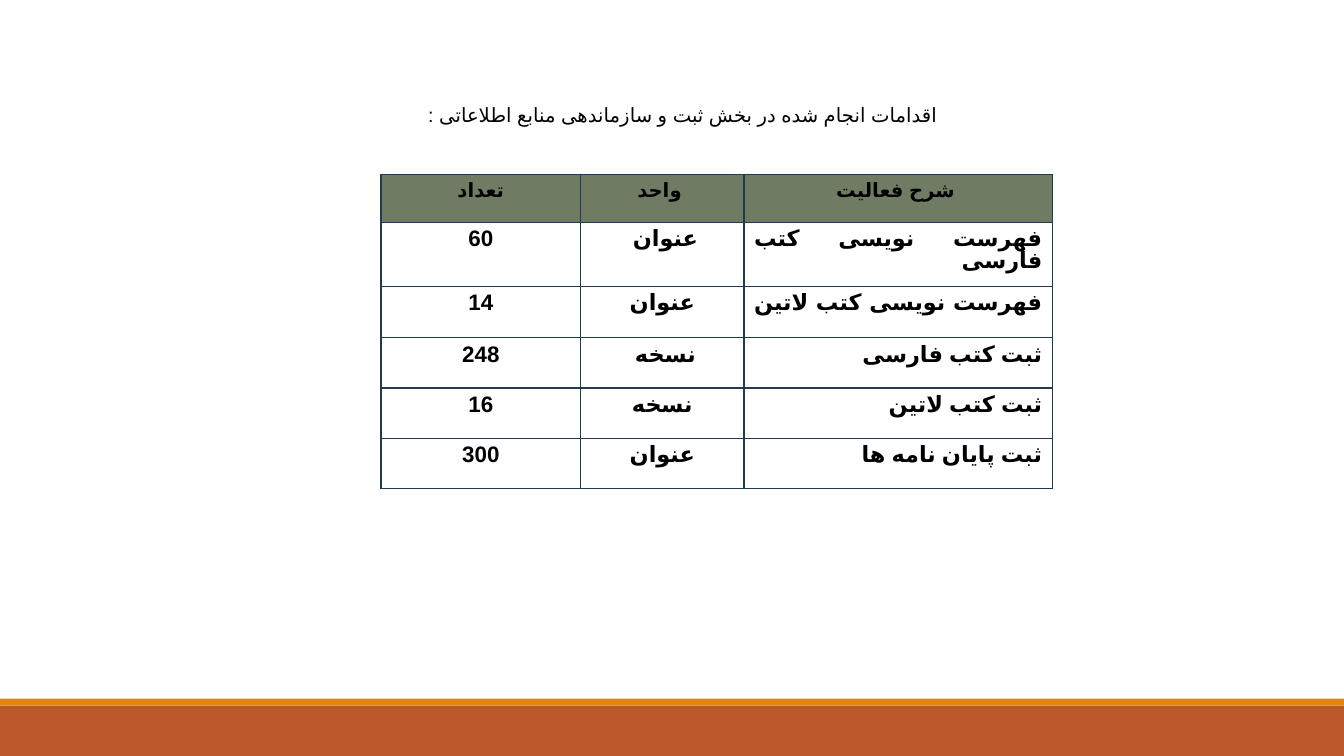
from pptx import Presentation
from pptx.dml.color import RGBColor
from pptx.enum.shapes import MSO_SHAPE as SHAPE
from pptx.enum.text import PP_ALIGN as AL
from pptx.oxml import parse_xml
from pptx.oxml.ns import nsdecls
from pptx.util import Pt

COLORS = {
    "text": "000000",
    "header": "6F7B63",
    "border": "203A4E",
    "band": "BD582C",
    "stripe": "E48312",
}
FONT = "Calibri"
ARABIC_FONT = "Arial"
TITLE = "اقدامات انجام شده در بخش ثبت و سازماندهی منابع اطلاعاتی :"
HEADER = ("تعداد", "واحد ", "شرح فعالیت ")
ACTIVITIES = [
    ("60", "عنوان ", "فهرست نویسی کتب فارسی "),
    ("14", "عنوان", "فهرست نویسی کتب لاتین "),
    ("248", "نسخه ", "ثبت کتب فارسی"),
    ("16", "نسخه", "ثبت کتب لاتین"),
    ("300", "عنوان", "ثبت پایان نامه ها "),
]
COL_WIDTHS = (142.5, 116.7, 220.3)
ROW_HEIGHTS = (34.5, 45.7, 36.5, 36, 36, 36)


def rgb(name):
    return RGBColor.from_string(COLORS[name])


def write(tf, text, size=16, bold=False, align=AL.CENTER, rtl=True,
          spacing=None, after=None):
    p = tf.paragraphs[0]
    p.alignment = align
    p.line_spacing = spacing
    if after is not None:
        p.space_after = Pt(after)
    if rtl:
        p._p.get_or_add_pPr().set("rtl", "1")
    r = p.add_run()
    r.text = text
    r.font.name = FONT
    r.font.size = Pt(size)
    r.font.bold = bold
    r.font.color.rgb = rgb("text")
    r_pr = r._r.get_or_add_rPr()
    r_pr.set("lang", "fa-IR")
    r_pr.append(parse_xml(f'<a:cs {nsdecls("a")} typeface="{ARABIC_FONT}"/>'))


def add_bar(s, color, x, y, w, h):
    sp = s.shapes.add_shape(SHAPE.RECTANGLE, Pt(x), Pt(y), Pt(w), Pt(h))
    sp.shadow.inherit = False
    sp.fill.solid()
    sp.fill.fore_color.rgb = rgb(color)
    sp.line.fill.background()


def add_footer(s, x, y, w, h, stripe=5):
    add_bar(s, "band", x, y + stripe, w, h - stripe)
    add_bar(s, "stripe", x, y, w, stripe)


def add_title(s, x, y, w, h):
    tf = s.shapes.add_textbox(Pt(x), Pt(y), Pt(w), Pt(h)).text_frame
    tf.word_wrap = True
    write(tf, TITLE, size=14, align=AL.RIGHT, spacing=1.07, after=8)


def set_borders(cell):
    """Draw a 1 pt line on all four sides; call before setting the fill."""
    tc_pr = cell._tc.get_or_add_tcPr()
    for side in ("lnL", "lnR", "lnT", "lnB"):
        tc_pr.append(parse_xml(
            f'<a:{side} {nsdecls("a")} w="12700"><a:solidFill>'
            f'<a:srgbClr val="{COLORS["border"]}"/></a:solidFill></a:{side}>'))


def add_activities(s, x, y):
    rows = [HEADER] + ACTIVITIES
    tbl = s.shapes.add_table(len(rows), len(HEADER), Pt(x), Pt(y),
                             Pt(sum(COL_WIDTHS)), Pt(sum(ROW_HEIGHTS))).table
    for col, width in zip(tbl.columns, COL_WIDTHS):
        col.width = Pt(width)
    for row, height in zip(tbl.rows, ROW_HEIGHTS):
        row.height = Pt(height)
    for i, texts in enumerate(rows):
        for j, text in enumerate(texts):
            cell = tbl.cell(i, j)
            set_borders(cell)
            if i == 0:
                cell.fill.solid()
                cell.fill.fore_color.rgb = rgb("header")
                write(cell.text_frame, text, size=14, bold=True, rtl=False)
            else:
                cell.fill.background()
                cell.margin_top = Pt(5.2)
                write(cell.text_frame, text, bold=True, spacing=0.86,
                      align=AL.JUSTIFY if j == 2 else AL.CENTER)


def main():
    prs = Presentation()
    prs.slide_width, prs.slide_height = Pt(960), Pt(540)
    s = prs.slides.add_slide(prs.slide_layouts[6])
    add_footer(s, 0, 499, 960, 41)
    add_title(s, 197.3, 69, 479.5, 25)
    add_activities(s, 272.2, 124.5)
    prs.save("out.pptx")


if __name__ == "__main__":
    main()
